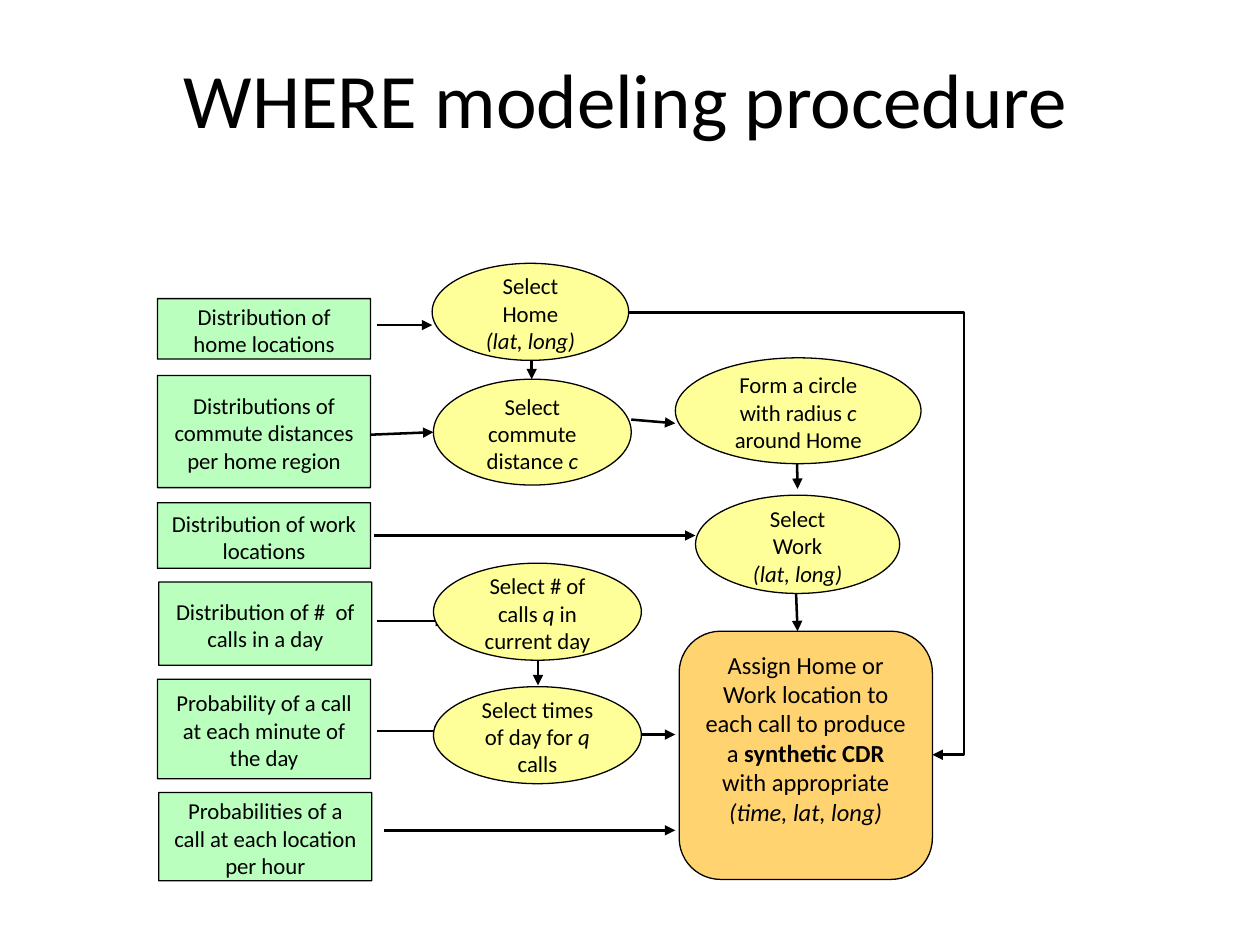
from dataclasses import dataclass

from lxml.etree import SubElement
from pptx import Presentation
from pptx.dml.color import RGBColor
from pptx.enum.shapes import MSO_CONNECTOR, MSO_SHAPE
from pptx.enum.text import MSO_ANCHOR, PP_ALIGN
from pptx.oxml.ns import qn
from pptx.util import Inches, Pt

COLUMNS, ROWS = 100, 75


@dataclass(frozen=True)
class Theme:
    font: str = "Calibri"
    ink: str = "000000"
    source: str = "BBFFBF"
    step: str = "FFFF99"
    result: str = "FFD370"
    title_size: float = 44
    label_size: float = 13
    result_size: float = 14
    outline: float = 0.75
    arrow: float = 1.45


def apply_format(target, values):
    for name, value in values.items():
        setattr(target, name, value)


class FlowPage:
    """Draws on one slide; lengths are columns and rows of the grid."""

    def __init__(self, deck, theme):
        self.theme = theme
        self.page = deck.slides.add_slide(deck.slide_layouts[5])
        self.column = deck.slide_width / COLUMNS
        self.row = deck.slide_height / ROWS

    def place(self, left, top, width, height):
        return (round(left * self.column), round(top * self.row),
                round(width * self.column), round(height * self.row))

    def add_lines(self, box, lines, size):
        """Fill a box with lines, where *text* is italic and ^text^ is bold."""
        frame = box.text_frame
        for number, line in enumerate(lines):
            para = frame.add_paragraph() if number else frame.paragraphs[0]
            para.alignment = PP_ALIGN.CENTER
            for i, part in enumerate(line.split("*")):
                for j, text in enumerate(part.split("^")):
                    if text:
                        self.add_span(para, text, size, i % 2 == 1, j % 2 == 1)

    def add_span(self, para, text, size, italic, bold):
        span = para.add_run()
        span.text = text
        apply_format(span.font, {"name": self.theme.font, "size": Pt(size),
                                 "italic": italic, "bold": bold})
        span.font.color.rgb = RGBColor.from_string(self.theme.ink)

    def title(self, text, area):
        box = self.page.shapes.title
        left, top, width, height = self.place(*area)
        apply_format(box, {"left": left, "top": top, "width": width, "height": height})
        apply_format(box.text_frame, {"vertical_anchor": MSO_ANCHOR.MIDDLE,
                                      "word_wrap": True, "margin_left": Inches(0.2)})
        self.add_lines(box, [text], self.theme.title_size)

    def node(self, kind, area, fill, lines, size, anchor=MSO_ANCHOR.MIDDLE, top_inset=0.07):
        box = self.page.shapes.add_shape(kind, *self.place(*area))
        box.shadow.inherit = False
        box.fill.solid()
        box.fill.fore_color.rgb = RGBColor.from_string(fill)
        box.line.color.rgb = RGBColor.from_string(self.theme.ink)
        box.line.width = Pt(self.theme.outline)
        apply_format(box.text_frame, {
            "word_wrap": True, "vertical_anchor": anchor,
            "margin_left": Inches(0.1), "margin_right": Inches(0.1),
            "margin_top": Inches(top_inset), "margin_bottom": Inches(0.05)})
        self.add_lines(box, lines, size)
        return box

    def source(self, left, top, height, text):
        box = self.node(MSO_SHAPE.ROUNDED_RECTANGLE, (left, top, 16.9, height),
                        self.theme.source, [text], self.theme.label_size)
        box.adjustments[0] = 0.002

    def step(self, area, *lines):
        self.node(MSO_SHAPE.OVAL, area, self.theme.step, lines, self.theme.label_size)

    def result(self, area, *lines):
        self.node(MSO_SHAPE.FLOWCHART_ALTERNATE_PROCESS, area, self.theme.result,
                  lines, self.theme.result_size, MSO_ANCHOR.TOP, 0.05)

    def arrow(self, x1, y1, x2, y2, bend_column=None):
        """Join two points, with an elbow when a column to bend at is given."""
        kind = MSO_CONNECTOR.STRAIGHT if bend_column is None else MSO_CONNECTOR.ELBOW
        line = self.page.shapes.add_connector(kind, *self.place(x1, y1, x2, y2))
        line.line.color.rgb = RGBColor.from_string(self.theme.ink)
        line.line.width = Pt(self.theme.arrow)
        properties = line._element.spPr
        SubElement(properties.find(qn("a:ln")), qn("a:tailEnd"), type="triangle")
        SubElement(properties, qn("a:effectLst"))
        if bend_column is not None:
            share = round((bend_column - x1) / (x2 - x1) * 100000)
            guides = properties.find(qn("a:prstGeom")).find(qn("a:avLst"))
            SubElement(guides, qn("a:gd"), name="adj1", fmla=f"val {share}")


SOURCE_ARROWS = [
    (50.1, 33.3, 53.6, 33.6),
    (29.7, 42.5, 55.2, 42.5),
    (50.9, 58.3, 53.6, 58.3),
    (30.5, 65.9, 53.6, 65.9),
    (29.9, 25.8, 34.3, 25.8),
    (29.9, 49.3, 35.4, 49.3),
    (29.9, 58, 35.3, 58),
]
SOURCES = [
    (12.5, 23.7, 4.8, "Distribution of home locations"),
    (12.5, 29.8, 8.9, "Distributions of commute distances per home region"),
    (12.5, 39.9, 5.2, "Distribution of work locations"),
    (12.6, 46.2, 6.6, "Distribution of #  of calls in a day"),
    (12.5, 53.9, 7.9, "Probability of a call at each minute of the day"),
    (12.6, 62.9, 7, "Probabilities of a call at each location per hour"),
]
STEP_ARROWS = [
    (63.1, 45, 63.3, 50.1),
    (49.9, 24.8, 74, 59.9, 76.5),
    (42.2, 28.4, 42.2, 30.1),
    (42.7, 52.4, 42.7, 54.4),
    (63.2, 33.4, 63.3, 38.8),
]
STEPS = [
    ((34.3, 20.9, 15.6, 7.7), "Select", "Home", "*(lat, long)*"),
    ((34.4, 30.1, 15.7, 8.4), "Select commute distance *c*"),
    ((53.6, 28.4, 19.5, 8.4), "Form a circle with radius *c *around Home"),
    ((55.2, 39.3, 16.2, 7.8), "Select", "Work", "*(lat, long)*"),
    ((34.4, 44.7, 16.5, 7.7), "Select # of calls *q* in current day"),
    ((34.4, 54.5, 16.5, 7.7), "Select times of day for *q *calls"),
]


def main():
    deck = Presentation()
    deck.slide_width, deck.slide_height = Inches(10), Inches(7.5)
    flow = FlowPage(deck, Theme())
    flow.title("WHERE modeling procedure", (4.2, 0.9, 90, 13.7))
    for ends in SOURCE_ARROWS:
        flow.arrow(*ends)
    for source in SOURCES:
        flow.source(*source)
    for ends in STEP_ARROWS:
        flow.arrow(*ends)
    for step in STEPS:
        flow.step(*step)
    flow.result((53.9, 50.1, 20.1, 19.7),
                "Assign Home or Work location to each call to produce a "
                "^synthetic CDR ^with appropriate",
                "*(time, lat, long)*")
    flow.arrow(29.4, 34.5, 34.4, 34.3)
    deck.save("out.pptx")


if __name__ == "__main__":
    main()
